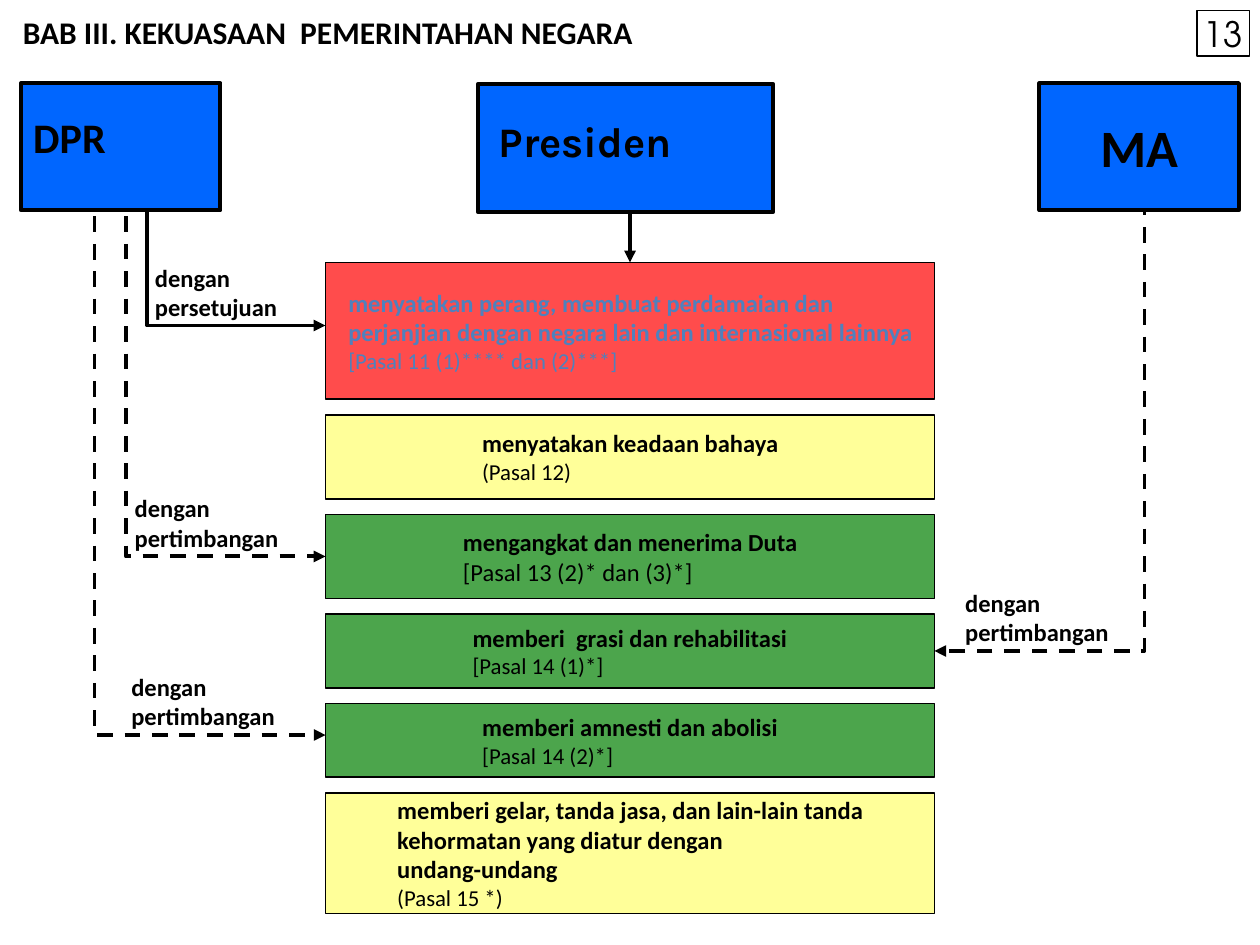
"""Build the slide on the powers of state government with python-pptx."""
from dataclasses import dataclass

from lxml import etree
from pptx import Presentation
from pptx.dml.color import RGBColor
from pptx.enum import dml, shapes, text
from pptx.oxml import ns
from pptx.util import Pt


@dataclass(frozen=True)
class Theme:
    """Colours, fonts and type sizes of the slide."""
    black: str = "000000"
    blue: str = "0066FF"
    red: str = "FF0000"
    yellow: str = "FFFF99"
    green: str = "008000"
    steel: str = "4F81BD"
    body_font: str = "Calibri"
    president_font: str = "Karla"
    number_font: str = "TeX Gyre Adventor"
    article: float = 13
    body: float = 14
    title: float = 18
    number: float = 20
    authority: float = 24
    court: float = 30


THEME = Theme()
LEFT, MIDDLE = text.PP_ALIGN.LEFT, text.MSO_ANCHOR.MIDDLE
CENTER, TOP = text.PP_ALIGN.CENTER, text.MSO_ANCHOR.TOP
BAND_LEFT, BAND_WIDTH, BAND_TOP, BAND_GAP = 186, 348, 150, 9
BAND_RIGHT = BAND_LEFT + BAND_WIDTH


def set_frame(shape, margins, anchor=TOP, wrap=True):
    """Set the margins (left, top, right, bottom), anchor and wrapping."""
    frame = shape.text_frame
    frame.margin_left, frame.margin_top, frame.margin_right, frame.margin_bottom = map(Pt, margins)
    frame.vertical_anchor = anchor
    frame.word_wrap = wrap


def write_lines(shape, lines, alignment=LEFT):
    """Write one paragraph for each (words, size, bold, colour, font)."""
    frame = shape.text_frame
    for index, (words, size, bold, colour, font) in enumerate(lines):
        paragraph = frame.add_paragraph() if index else frame.paragraphs[0]
        paragraph.text = words
        paragraph.alignment = alignment
        paragraph.font.size = Pt(size)
        paragraph.font.bold = bold
        paragraph.font.name = font
        paragraph.font.color.rgb = RGBColor.from_string(colour)


def add_box(slide, position, fill, line_width, opacity=100):
    """Add an outlined rectangle, filled when a colour is given."""
    box = slide.shapes.add_shape(shapes.MSO_SHAPE.RECTANGLE, *map(Pt, position))
    box.shadow.inherit = False
    box.line.color.rgb = RGBColor.from_string(THEME.black)
    box.line.width = Pt(line_width)
    if fill is None:
        box.fill.background()
        return box
    box.fill.solid()
    box.fill.fore_color.rgb = RGBColor.from_string(fill)
    if opacity < 100:
        colour = box.fill._xPr.find(".//" + ns.qn("a:srgbClr"))
        etree.SubElement(colour, ns.qn("a:alpha"), val=str(opacity * 1000))
    return box


def add_text(slide, position, lines, margins, wrap=True, alignment=LEFT):
    """Add a text box."""
    box = slide.shapes.add_textbox(*map(Pt, position))
    set_frame(box, margins, wrap=wrap)
    write_lines(box, lines, alignment)


def style_arrow(shape, dashed=False):
    """Give a line its colour, width, dash and arrowhead."""
    shape.line.color.rgb = RGBColor.from_string(THEME.black)
    shape.line.width = Pt(2.25)
    if dashed:
        shape.line.dash_style = dml.MSO_LINE.DASH
    etree.SubElement(shape.line._get_or_add_ln(), ns.qn("a:tailEnd"), type="triangle")


def add_straight_arrow(slide, start, end):
    """Add a straight connector with an arrowhead."""
    arrow = slide.shapes.add_connector(shapes.MSO_CONNECTOR.STRAIGHT, *map(Pt, start + end))
    style_arrow(arrow)
    etree.SubElement(arrow._element.spPr, ns.qn("a:effectLst"))


def add_elbow_arrow(slide, start, end, dashed):
    """Add an open outline that runs down and then across."""
    builder = slide.shapes.build_freeform(Pt(start[0]), Pt(start[1]))
    corner = (start[0], end[1])
    builder.add_line_segments([tuple(map(Pt, point)) for point in (corner, end)], close=False)
    arrow = builder.convert_to_shape()
    arrow.shadow.inherit = False
    arrow.fill.background()
    style_arrow(arrow, dashed)


def add_bands(slide):
    """Stack the presidential powers with equal gaps."""
    bands = [
        (78, THEME.red, 70, 13, THEME.steel, THEME.article,
         ["menyatakan perang, membuat perdamaian dan perjanjian dengan negara lain "
          "dan internasional lainnya"], "[Pasal 11 (1)**** dan (2)***]"),
        (48, THEME.yellow, 100, 89.5, THEME.black, THEME.article,
         ["menyatakan keadaan bahaya"], "(Pasal 12)"),
        (48, THEME.green, 70, 78.5, THEME.black, THEME.body,
         ["mengangkat dan menerima Duta"], "[Pasal 13 (2)* dan (3)*]"),
        (42, THEME.green, 70, 84, THEME.black, THEME.article,
         ["memberi  grasi dan rehabilitasi"], "[Pasal 14 (1)*]"),
        (42, THEME.green, 70, 89.5, THEME.black, THEME.article,
         ["memberi amnesti dan abolisi"], "[Pasal 14 (2)*]"),
        (69, THEME.yellow, 100, 41, THEME.black, THEME.article,
         ["memberi gelar, tanda jasa, dan lain-lain tanda kehormatan yang diatur dengan",
          "undang-undang"], "(Pasal 15 *)"),
    ]
    top = BAND_TOP
    for height, fill, opacity, indent, colour, article_size, powers, article in bands:
        band = add_box(slide, (BAND_LEFT, top, BAND_WIDTH, height), fill, 1, opacity)
        set_frame(band, (indent, 0, 7, 0), MIDDLE)
        lines = [(power, THEME.body, True, colour, THEME.body_font) for power in powers]
        write_lines(band, lines + [(article, article_size, False, colour, THEME.body_font)])
        top += height + BAND_GAP


def add_consents(slide):
    """Link the other institutions to the powers, each link with its label."""
    consents = [
        ((84, 108), (BAND_LEFT, 186), False, 88.5, "persetujuan"),
        ((72, 108), (BAND_LEFT, 318), True, 77, "pertimbangan"),
        ((654, 114), (BAND_RIGHT, 372), True, 551.5, "pertimbangan"),
        ((54, 108), (BAND_LEFT, 420), True, 75, "pertimbangan"),
    ]
    for start, end, dashed, label_left, consent in consents:
        add_elbow_arrow(slide, start, end, dashed)
        lines = [(words, THEME.body, True, THEME.black, THEME.body_font)
                 for words in ("dengan", consent)]
        add_text(slide, (label_left, end[1] - 36, 99, 34), lines, (0, 0, 0, 0), wrap=False)


def add_institutions(slide):
    """Add the three institutions along the top."""
    institutions = [
        ("Presiden", 273, 48.25, 169, THEME.authority, THEME.president_font, (12, 18, 7, 0), TOP, LEFT),
        ("DPR", 12, 47.5, 114, THEME.authority, THEME.body_font, (7, 16, 7, 0), TOP, LEFT),
        ("MA", 594, 47.5, 114, THEME.court, THEME.body_font, (7, 4, 7, 4), MIDDLE, CENTER),
    ]
    for name, left, top, width, size, font, margins, anchor, alignment in institutions:
        box = add_box(slide, (left, top, width, 72.75), THEME.blue, 2.25)
        set_frame(box, margins, anchor)
        write_lines(box, [(name, size, True, THEME.black, font)], alignment)


def main():
    """Assemble and save the slide."""
    presentation = Presentation()
    presentation.slide_width, presentation.slide_height = Pt(720), Pt(540)
    slide = presentation.slides.add_slide(presentation.slide_layouts[6])
    title = [("BAB III. KEKUASAAN  PEMERINTAHAN NEGARA", THEME.title, True, THEME.black, THEME.body_font)]
    add_text(slide, (6, 3.75, 492, 30), title, (7, 4, 7, 4), alignment=text.PP_ALIGN.JUSTIFY)
    add_straight_arrow(slide, (360, 108), (360, BAND_TOP))
    add_bands(slide)
    add_consents(slide)
    add_institutions(slide)
    number = add_box(slide, (684, 6, 30, 26), None, 0.75)
    set_frame(number, (0, 0, 0, 0), MIDDLE)
    write_lines(number, [("13", THEME.number, False, THEME.black, THEME.number_font)], CENTER)
    presentation.save("out.pptx")


if __name__ == "__main__":
    main()
